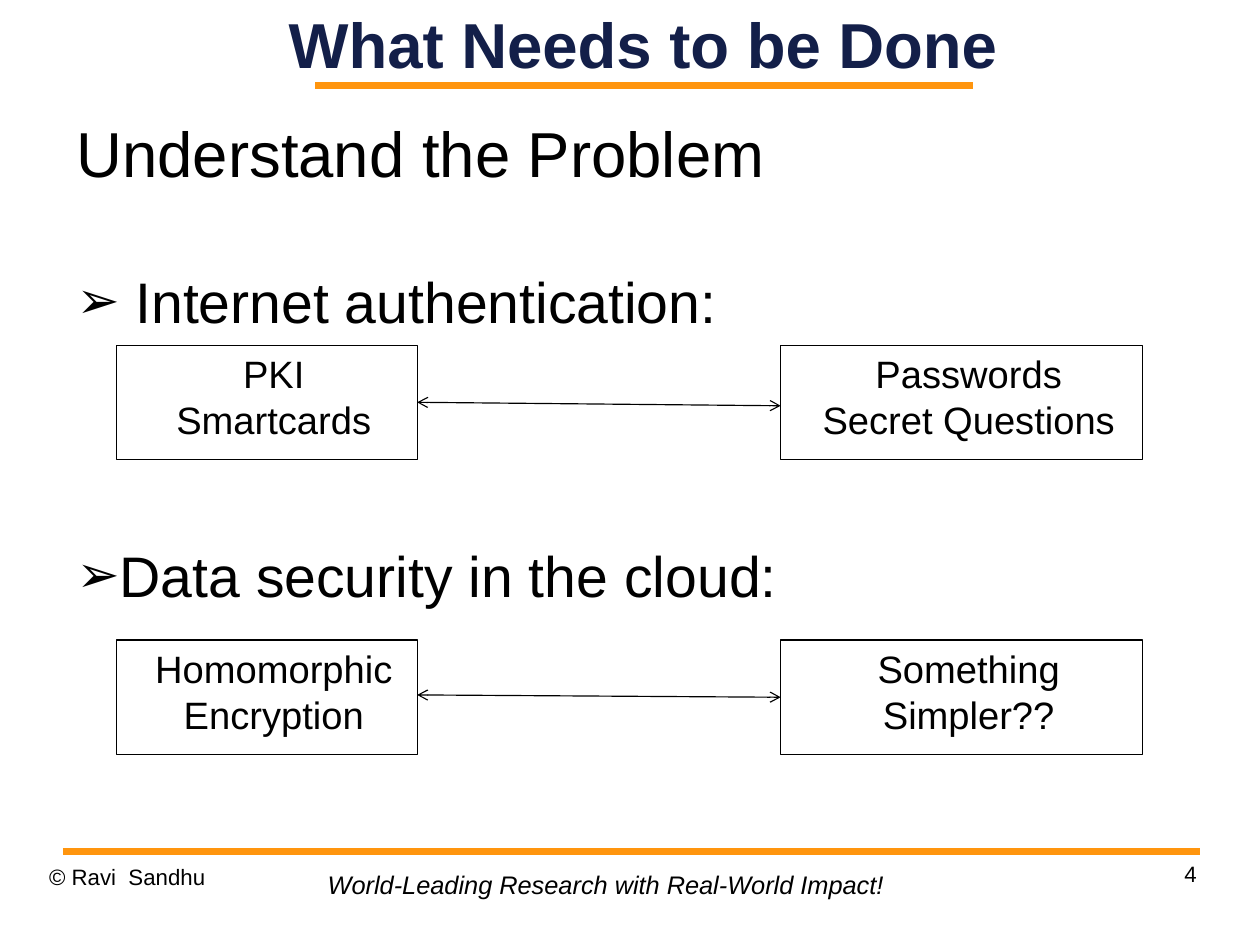
from lxml import etree
from pptx import Presentation
from pptx.dml.color import RGBColor
from pptx.enum.shapes import MSO_CONNECTOR, MSO_SHAPE
from pptx.enum.text import MSO_ANCHOR, PP_ALIGN
from pptx.oxml.ns import qn
from pptx.util import Inches, Pt

STRAIGHT, RECT = MSO_CONNECTOR.STRAIGHT, MSO_SHAPE.RECTANGLE
TOP, MIDDLE = MSO_ANCHOR.TOP, MSO_ANCHOR.MIDDLE
LEFT, CENTER, RIGHT = PP_ALIGN.LEFT, PP_ALIGN.CENTER, PP_ALIGN.RIGHT
SITE_LEFT, SITE_RIGHT = 1, 3

# Content
TITLE = "What Needs to be Done"
# text, style, space before in points, bullet
BODY = [
    ("Understand the Problem", "heading", 0, None),
    (" Internet authentication:", "topic", 48, "➢"),
    ("Data security in the cloud:", "topic", 129, "➢"),
]
# row top, left box, right box, arrow start and end heights
COMPARISONS = [
    (3.02, ["PKI", "Smartcards"], ["Passwords", "Secret Questions"], 3.52, 3.55),
    (5.6, ["Homomorphic", "Encryption"], ["Something", "Simpler??"], 6.08, 6.1),
]
# text, style, alignment, left, top, width, height
FOOTER = [
    ("© Ravi  Sandhu", "footer", LEFT, 0.43, 7.55, 2.57, 0.57),
    ("4", "footer", RIGHT, 7.9, 7.53, 2.57, 0.57),
    ("World-Leading Research with Real-World Impact!", "motto", CENTER,
     2.76, 7.6, 5.08, 0.37),
]

# Theme
THEME = {
    "font": "Arial",
    "black": RGBColor(0x00, 0x00, 0x00),
    "navy": RGBColor(0x13, 0x1F, 0x49),
    "orange": RGBColor(0xFF, 0x95, 0x0E),
    "rule": 4.31,
    "thin": 0.75,
}
STYLES = {
    "title": {"size": Pt(40), "bold": True},
    "heading": {"size": Pt(40)},
    "topic": {"size": Pt(36)},
    "box": {"size": Pt(24)},
    "footer": {"size": Pt(14)},
    "motto": {"size": Pt(16), "italic": True},
}

# Layout: the page is 28 by 21 cm
CM_PER_INCH = 2.54
PAGE_W, PAGE_H = 28 / CM_PER_INCH, 21 / CM_PER_INCH
RULES = [(2.76, 8.51, 0.75), (0.55, 10.5, 7.45)]
LEFT_BOX, RIGHT_BOX = (1.02, 2.63), (6.83, 3.17)
BOX_H = 1
INDENT, HANGING = 0.47, -0.35

prs = Presentation()
prs.slide_width, prs.slide_height = Inches(PAGE_W), Inches(PAGE_H)
s = prs.slides.add_slide(prs.slide_layouts[6])


def add_paragraph(tf, first, text, style, align=LEFT, color="black",
                  before=0, bullet=None, indent=False):
    p = tf.paragraphs[0] if first else tf.add_paragraph()
    p.alignment = align
    p.space_before = Pt(before)
    pPr = p._p.get_or_add_pPr()
    if indent:
        pPr.set("marL", str(Inches(INDENT)))
        pPr.set("indent", str(Inches(HANGING)))
    if bullet:
        etree.SubElement(pPr, qn("a:buSzPct")).set("val", "90000")
        etree.SubElement(pPr, qn("a:buFont")).set("typeface", THEME["font"])
        etree.SubElement(pPr, qn("a:buChar")).set("char", bullet)
    r = p.add_run()
    r.text = text
    r.font.name = THEME["font"]
    r.font.color.rgb = THEME[color]
    for name, value in STYLES[style].items():
        setattr(r.font, name, value)


def add_text_box(x, y, w, h, anchor=TOP):
    tf = s.shapes.add_textbox(*map(Inches, (x, y, w, h))).text_frame
    tf.word_wrap = True
    tf.vertical_anchor = anchor
    for side in ("left", "top", "right", "bottom"):
        setattr(tf, f"margin_{side}", 0)
    return tf


def add_line(x1, y1, x2, y2, color, width):
    line = s.shapes.add_connector(STRAIGHT, *map(Inches, (x1, y1, x2, y2)))
    line.line.color.rgb = THEME[color]
    line.line.width = Pt(THEME[width])
    etree.SubElement(line._element.spPr, qn("a:effectLst"))
    return line


def add_box(x, w, y, lines):
    sp = s.shapes.add_shape(RECT, *map(Inches, (x, y, w, BOX_H)))
    sp.shadow.inherit = False
    sp.fill.background()
    sp.line.color.rgb = THEME["black"]
    sp.line.width = Pt(THEME["thin"])
    tf = sp.text_frame
    tf.word_wrap = True
    tf.vertical_anchor = TOP
    for i, text in enumerate(lines):
        add_paragraph(tf, i == 0, text, "box", CENTER, indent=True)
    return sp


# Rules under the title and above the footer
for x1, x2, y in RULES:
    add_line(x1, y, x2, y, "orange", "rule")

# Title and body
add_paragraph(add_text_box(2.41, 0, 6.43, 0.75, MIDDLE), True, TITLE,
              "title", CENTER, "navy")
tf = add_text_box(0.55, 1, 9.6, 4.62)
for i, (text, style, before, bullet) in enumerate(BODY):
    add_paragraph(tf, i == 0, text, style, before=before, bullet=bullet, indent=True)

# Footer
for text, style, align, *place in FOOTER:
    add_paragraph(add_text_box(*place), True, text, style, align)

# Compared pairs with two-headed arrows
for top, left_lines, right_lines, y1, y2 in COMPARISONS:
    left = add_box(*LEFT_BOX, top, left_lines)
    right = add_box(*RIGHT_BOX, top, right_lines)
    arrow = add_line(sum(LEFT_BOX), y1, RIGHT_BOX[0], y2, "black", "thin")
    ln = arrow.line._get_or_add_ln()
    for end in ("a:headEnd", "a:tailEnd"):
        etree.SubElement(ln, qn(end)).set("type", "arrow")
    middle = round(top + BOX_H / 2, 2)
    if y1 == middle:
        arrow.begin_connect(left, SITE_RIGHT)
    if y2 == middle:
        arrow.end_connect(right, SITE_LEFT)

prs.save("out.pptx")
